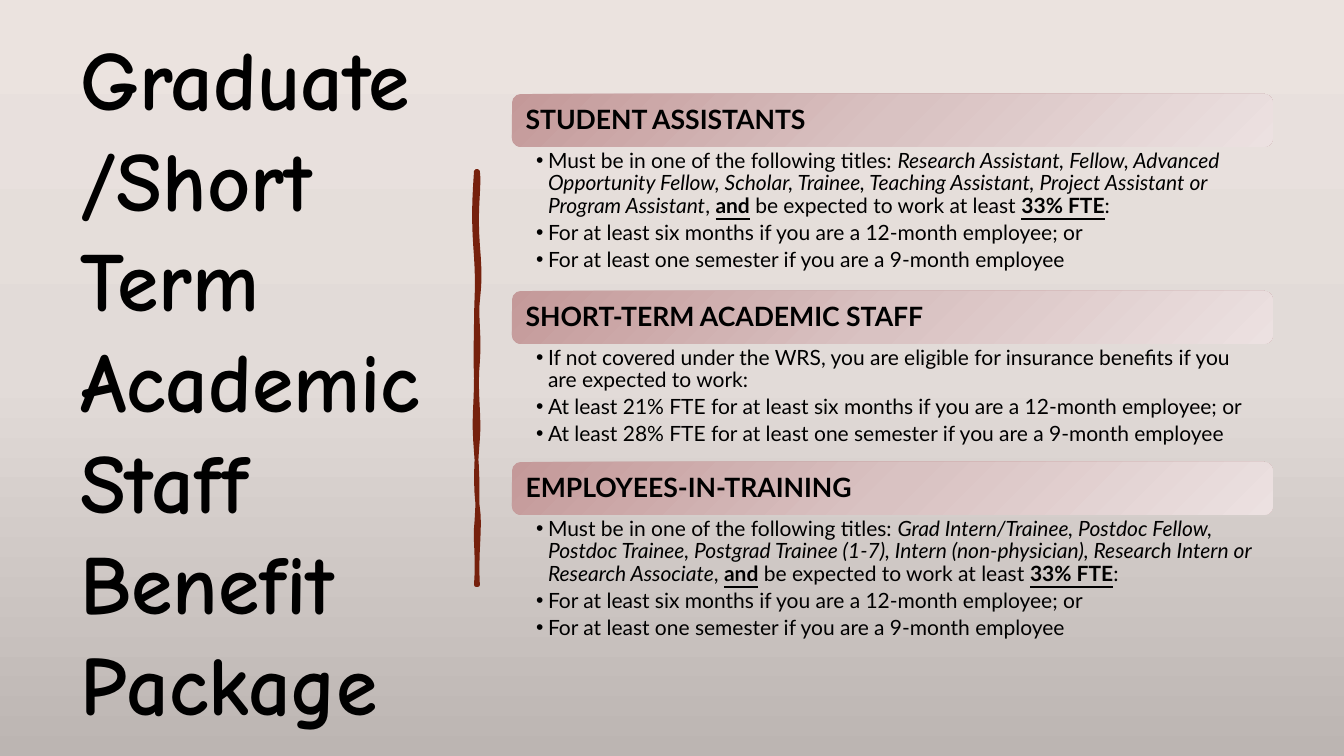
from copy import deepcopy

from lxml.etree import SubElement
from pptx import Presentation
from pptx.dml.color import RGBColor
from pptx.enum.shapes import MSO_SHAPE
from pptx.enum.text import MSO_ANCHOR, MSO_AUTO_SIZE, PP_ALIGN
from pptx.oxml.ns import qn
from pptx.util import Emu, Pt

BLACK = RGBColor(0x00, 0x00, 0x00)
RUST = RGBColor(0x76, 0x21, 0x0D)
PAGE_COLORS = (RGBColor(0xEB, 0xE3, 0xDF), RGBColor(0xE2, 0xDB, 0xD8), RGBColor(0xBC, 0xB5, 0xB2))
BAR_COLORS = (RGBColor(0xC4, 0x99, 0x99), RGBColor(0xD9, 0xC2, 0xC2), RGBColor(0xEC, 0xE1, 0xE1))

LEFT, WIDTH, BAR_HEIGHT = 512, 761, 53

TERM_RULES = [
    [("For at least six months if you are a 12-month employee; or", {})],
    [("For at least one semester if you are a 9-month employee", {})],
]
STRONG = {"bold": True, "underline": True}
FTE_RULE = [
    ("and", STRONG),
    (" be expected to work at least ", {}),
    ("33% FTE", STRONG),
    (":", {}),
]


def titles_rule(titles):
    return [
        ("Must be in one of the following titles: ", {}),
        (titles, {"italic": True}),
        (", ", {}),
        *FTE_RULE,
    ]


SECTIONS = [
    ("STUDENT ASSISTANTS", 94, 143, [
        titles_rule("Research Assistant, Fellow, Advanced Opportunity Fellow, Scholar, Trainee, "
                    "Teaching Assistant, Project Assistant or Program Assistant"),
        *TERM_RULES,
    ]),
    ("SHORT-TERM ACADEMIC STAFF", 291, 117, [
        [("If not covered under the WRS, you are eligible for insurance benefits "
          "if you are expected to work:", {})],
        [("At least 21% FTE for at least six months if you are a 12-month employee; or", {})],
        [("At least 28% FTE for at least one semester if you are a 9-month employee", {})],
    ]),
    ("EMPLOYEES-IN-TRAINING", 462, 143, [
        titles_rule("Grad Intern/Trainee, Postdoc Fellow, Postdoc Trainee, Postgrad Trainee (1-7), "
                    "Intern (non-physician), Research Intern or Research Associate"),
        *TERM_RULES,
    ]),
]

DIVIDER_START = (476, 171)
DIVIDER_CURVES = [
    (477, 171, 477, 171, 478, 171),
    (480, 187, 475, 209, 478, 245),
    (481, 281, 479, 287, 478, 301),
    (476, 315, 480, 334, 478, 362),
    (475, 390, 480, 416, 478, 439),
    (476, 462, 475, 488, 478, 508),
    (481, 527, 476, 553, 478, 585),
    (477, 585, 477, 585, 476, 585),
    (478, 558, 475, 540, 476, 528),
    (477, 517, 479, 487, 476, 452),
    (473, 416, 476, 409, 476, 378),
    (475, 348, 476, 344, 476, 322),
    (476, 300, 478, 287, 476, 257),
    (474, 228, 473, 214, 476, 171),
]


def px(n):
    return Emu(round(n * 12192000 / 1344))


def add_run(p, text, size=15, font="Lato", bold=False, italic=False, underline=False):
    r = p.add_run()
    r.text = text
    r.font.size = Pt(size)
    r.font.name = font
    r.font.bold = bold
    r.font.italic = italic
    r.font.underline = underline
    r.font.color.rgb = BLACK


def set_gradient(fill, element, colors, angle):
    fill.gradient()
    gs = element.xpath(".//a:gs")[0]
    gs.addnext(deepcopy(gs))
    for stop, color, position in zip(fill.gradient_stops, colors, (0, 0.5, 1)):
        stop.color.rgb = color
        stop.position = position
    fill.gradient_angle = 360 - angle


def curve_points(start, curves, steps=8):
    x0, y0 = start
    for x1, y1, x2, y2, x3, y3 in curves:
        for t in (k / steps for k in range(1, steps + 1)):
            u = 1 - t
            a, b, c, d = u ** 3, 3 * u * u * t, 3 * u * t * t, t ** 3
            yield a * x0 + b * x1 + c * x2 + d * x3, a * y0 + b * y1 + c * y2 + d * y3
        x0, y0 = x3, y3


class SlideBuilder:
    def __init__(self, s):
        self.s = s

    def frame(self, sp, margins, anchor):
        tf = sp.text_frame
        tf.word_wrap = True
        tf.auto_size = MSO_AUTO_SIZE.NONE
        tf.vertical_anchor = anchor
        tf.margin_left, tf.margin_top, tf.margin_right, tf.margin_bottom = map(px, margins)
        return tf

    def place(self, sp, x, y, w, h):
        sp.left, sp.top, sp.width, sp.height = map(px, (x, y, w, h))

    def background(self, colors):
        set_gradient(self.s.background.fill, self.s.element, colors, 90)

    def title(self, text, *box):
        sp = self.s.shapes.title
        self.place(sp, *box)
        p = self.frame(sp, (10, 5, 10, 5), MSO_ANCHOR.MIDDLE).paragraphs[0]
        p.alignment = PP_ALIGN.LEFT
        add_run(p, text, size=60, font="Comic Neue", bold=True)

    def divider(self, start, curves):
        fb = self.s.shapes.build_freeform(px(start[0]), px(start[1]))
        fb.add_line_segments([(px(x), px(y)) for x, y in curve_points(start, curves)])
        sp = fb.convert_to_shape()
        sp.shadow.inherit = False
        sp.fill.solid()
        sp.fill.fore_color.rgb = RUST
        sp.line.color.rgb = RUST
        sp.line.width = Pt(2.75)

    def bar(self, text, *box):
        sp = self.s.shapes.add_shape(MSO_SHAPE.ROUNDED_RECTANGLE, *map(px, box))
        sp.shadow.inherit = False
        set_gradient(sp.fill, sp.element, BAR_COLORS, 45)
        sp.line.fill.background()
        p = self.frame(sp, (11, 8, 11, 8), MSO_ANCHOR.MIDDLE).paragraphs[0]
        p.alignment = PP_ALIGN.LEFT
        p.line_spacing = 0.9
        add_run(p, text, size=19, bold=True)

    def bullets(self, sp, items, *box):
        self.place(sp, *box)
        tf = self.frame(sp, (24, 3, 15, 3), MSO_ANCHOR.TOP)
        for i, runs in enumerate(items):
            p = tf.add_paragraph() if i else tf.paragraphs[0]
            p.level = 1
            p.line_spacing = 0.9
            p.space_before = Pt(0)
            p.space_after = Pt(3)
            pPr = p._p.get_or_add_pPr()
            pPr.set("marL", str(px(12)))
            pPr.set("indent", str(px(-12)))
            SubElement(pPr, qn("a:buChar"), char="•")
            for text, style in runs:
                add_run(p, text, **style)


def main():
    prs = Presentation()
    prs.slide_width, prs.slide_height = px(1344), px(756)
    s = prs.slides.add_slide(prs.slide_layouts.get_by_name("Comparison"))
    bodies = [sp for sp in s.placeholders if 1 <= sp.placeholder_format.idx <= 4]
    spare = bodies.pop()
    spare.element.getparent().remove(spare.element)

    b = SlideBuilder(s)
    b.background(PAGE_COLORS)
    b.title("Graduate/Short Term Academic Staff Benefit Package", 70, 71, 377, 616)
    b.divider(DIVIDER_START, DIVIDER_CURVES)
    for body, (heading, top, height, items) in zip(bodies, SECTIONS):
        b.bar(heading, LEFT, top, WIDTH, BAR_HEIGHT)
        b.bullets(body, items, LEFT, top + BAR_HEIGHT, WIDTH, height)
    prs.save("out.pptx")


if __name__ == "__main__":
    main()
